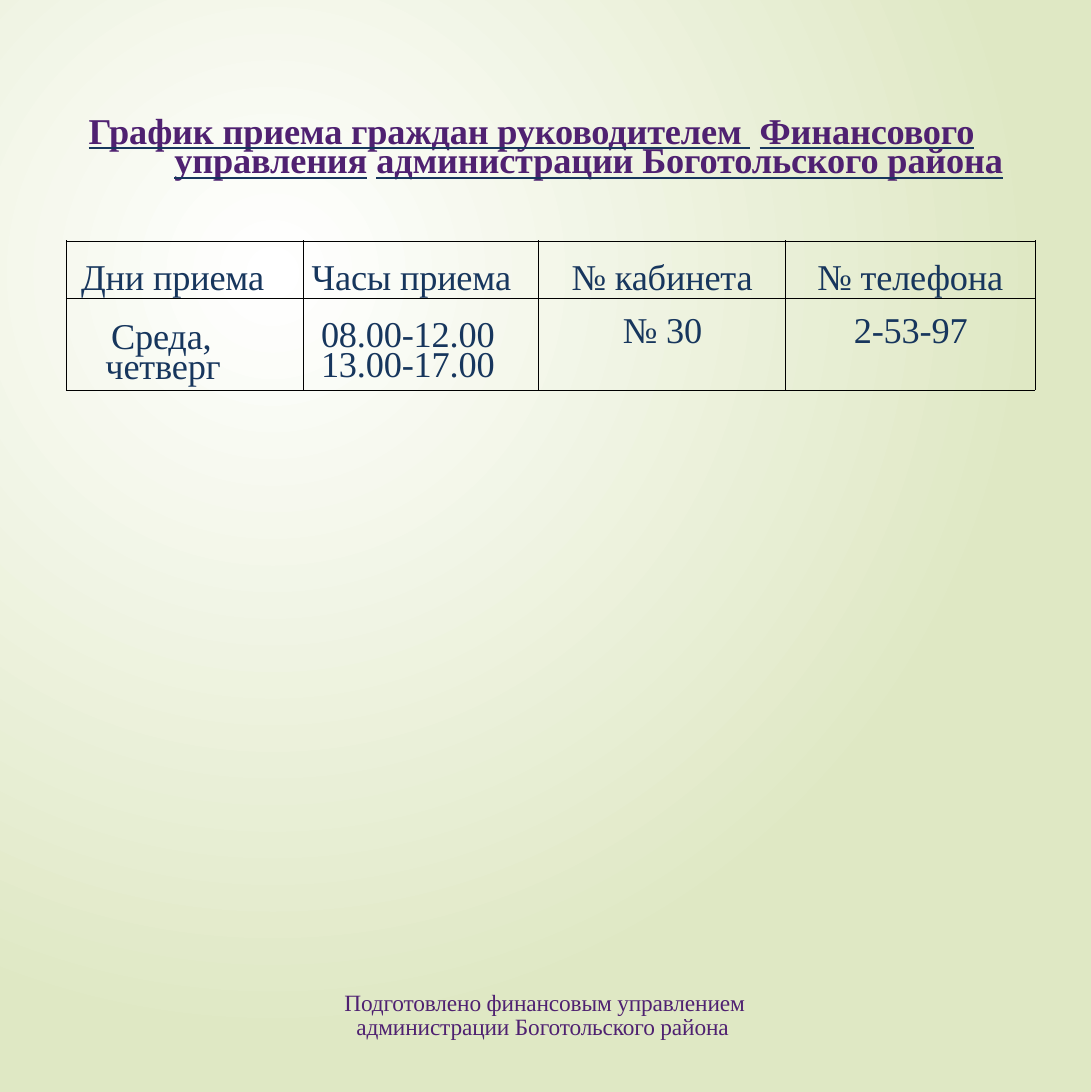
from dataclasses import dataclass

from lxml import etree
from pptx import Presentation
from pptx.dml.color import RGBColor
from pptx.enum.text import PP_ALIGN
from pptx.oxml.ns import qn
from pptx.util import Inches, Pt

LEFT, CENTER = PP_ALIGN.LEFT, PP_ALIGN.CENTER
SLIDE_W, SLIDE_H = 11.69, 11.7


@dataclass(frozen=True)
class Theme:
    """Colours, font and type sizes of the slide."""
    font: str = "Times New Roman"
    purple: str = "4F2171"
    navy: str = "17365D"
    border: str = "000000"
    glow: str = "FFFFFF"
    ground: str = "DFE8C4"
    main_size: int = 28
    note_size: int = 18
    tracking: int = -10


THEME = Theme()

TITLE = [
    ("График приема граждан руководителем ", True),
    (" ", False),
    ("Финансового управления", True),
    (" ", False),
    ("администрации Боготольского района", True),
]
NOTE = "Подготовлено финансовым управлением администрации Боготольского района"

COLUMN_WIDTHS = [2.54, 2.52, 2.65, 2.67]
ROW_HEIGHTS = [0.62, 0.98]
SCHEDULE = [
    [
        (["Дни приема"], LEFT, 0.16, 0, 0.31, 22),
        (["Часы приема"], LEFT, 0.09, 0, 0.31, 22),
        (["№ кабинета"], CENTER, 0, 0, 0.31, 22),
        (["№ телефона"], CENTER, 0, 0, 0.31, 22),
    ],
    [
        (["Среда, четверг"], LEFT, 0.42, 0.06, 0.32, 22.6),
        (["08.00-12.00", "13.00-17.00"], LEFT, 0.19, 0, 0.28, 23.3),
        (["№ 30"], CENTER, 0.01, 0, 0.13, None),
        (["2-53-97"], CENTER, 0.01, 0, 0.13, None),
    ],
]


def add_colour(parent, colour):
    """Append a solid fill of the given colour to an XML element."""
    solid = etree.SubElement(parent, qn("a:solidFill"))
    etree.SubElement(solid, qn("a:srgbClr"), val=colour)


def style_paragraph(paragraph, size, colour, leading, left=0, first=0, align=LEFT, bold=False):
    """Set the type, leading and indents of a paragraph."""
    paragraph.alignment = align
    if leading:
        paragraph.line_spacing = Pt(leading)
    font = paragraph.font
    font.name, font.size, font.bold = THEME.font, Pt(size), bold
    font.color.rgb = RGBColor.from_string(colour)
    properties = paragraph._p.get_or_add_pPr()
    properties.set("marL", str(Inches(left)))
    properties.set("indent", str(Inches(first)))
    properties.find(qn("a:defRPr")).set("spc", str(THEME.tracking))


def set_margins(holder, top):
    """Clear the margins of a cell or text frame except the top one."""
    holder.margin_left = holder.margin_right = holder.margin_bottom = 0
    holder.margin_top = Inches(top)


def add_text_area(slide, box):
    """Add a wrapping text box and return its first paragraph."""
    frame = slide.shapes.add_textbox(*map(Inches, box)).text_frame
    frame.word_wrap = True
    set_margins(frame, 0.03)
    return frame.paragraphs[0]


def paint_background(slide):
    """Fill the slide with a radial glow in its upper left part."""
    fill = slide.background.fill
    fill.gradient()
    for stop, colour in zip(fill.gradient_stops, (THEME.glow, THEME.ground)):
        stop.color.rgb = RGBColor.from_string(colour)
    gradient = slide.element.find(".//" + qn("a:gradFill"))
    gradient.remove(gradient.find(qn("a:lin")))
    circle = etree.SubElement(gradient, qn("a:path"), path="circle")
    etree.SubElement(circle, qn("a:fillToRect"), l="50000", t="50000", r="100000", b="100000")


def add_title(slide, box):
    """Write the underlined heading with a hanging indent."""
    heading = add_text_area(slide, box)
    style_paragraph(heading, THEME.main_size, THEME.purple, 23.1, 0.94, -0.92, bold=True)
    for words, underlined in TITLE:
        run = heading.add_run()
        run.text = words
        run.font.underline = underlined
        if underlined:
            underline = etree.SubElement(run._r.get_or_add_rPr(), qn("a:uFill"))
            add_colour(underline, THEME.navy)


def add_borders(cell, widths):
    """Draw the left, right, top and bottom borders of a cell."""
    properties = cell._tc.get_or_add_tcPr()
    for side, width in zip(("L", "R", "T", "B"), widths):
        line = etree.SubElement(properties, qn("a:ln" + side), w=str(Pt(width)))
        add_colour(line, THEME.border)


def fill_cell(cell, lines, align, left, first, top, leading):
    """Write the lines of one schedule cell."""
    cell.fill.background()
    set_margins(cell, top)
    cell.text_frame.text = "\n".join(lines)
    for paragraph in cell.text_frame.paragraphs:
        style_paragraph(paragraph, THEME.main_size, THEME.navy, leading, left, first, align)


def add_schedule(slide, left, top):
    """Build the table of reception hours."""
    size = sum(COLUMN_WIDTHS), sum(ROW_HEIGHTS)
    table = slide.shapes.add_table(
        len(ROW_HEIGHTS), len(COLUMN_WIDTHS), *map(Inches, (left, top, *size))
    ).table
    table.first_row = table.horz_banding = False
    for column, width in zip(table.columns, COLUMN_WIDTHS):
        column.width = Inches(width)
    for row, height in zip(table.rows, ROW_HEIGHTS):
        row.height = Inches(height)
    edges = [(0.5, 0.5, 0.5, 0.75), (0.5, 0.5, 0.75, 0.5)]
    for row, entries, widths in zip(table.rows, SCHEDULE, edges):
        for cell, entry in zip(row.cells, entries):
            add_borders(cell, widths)
            fill_cell(cell, *entry)


def add_note(slide, box):
    """Write the line naming who prepared the schedule."""
    note = add_text_area(slide, box)
    note.text = NOTE
    style_paragraph(note, THEME.note_size, THEME.purple, 18.5, 0.14, -0.13)


def main():
    """Build and save the slide."""
    deck = Presentation()
    deck.slide_width, deck.slide_height = Inches(SLIDE_W), Inches(SLIDE_H)
    slide = deck.slides.add_slide(deck.slide_layouts[6])
    paint_background(slide)
    add_title(slide, (0.93, 1.27, 10.1, 0.69))
    add_schedule(slide, 0.71, 2.58)
    add_note(slide, (3.68, 10.6, 4.5, 0.56))
    deck.save("out.pptx")


if __name__ == "__main__":
    main()
